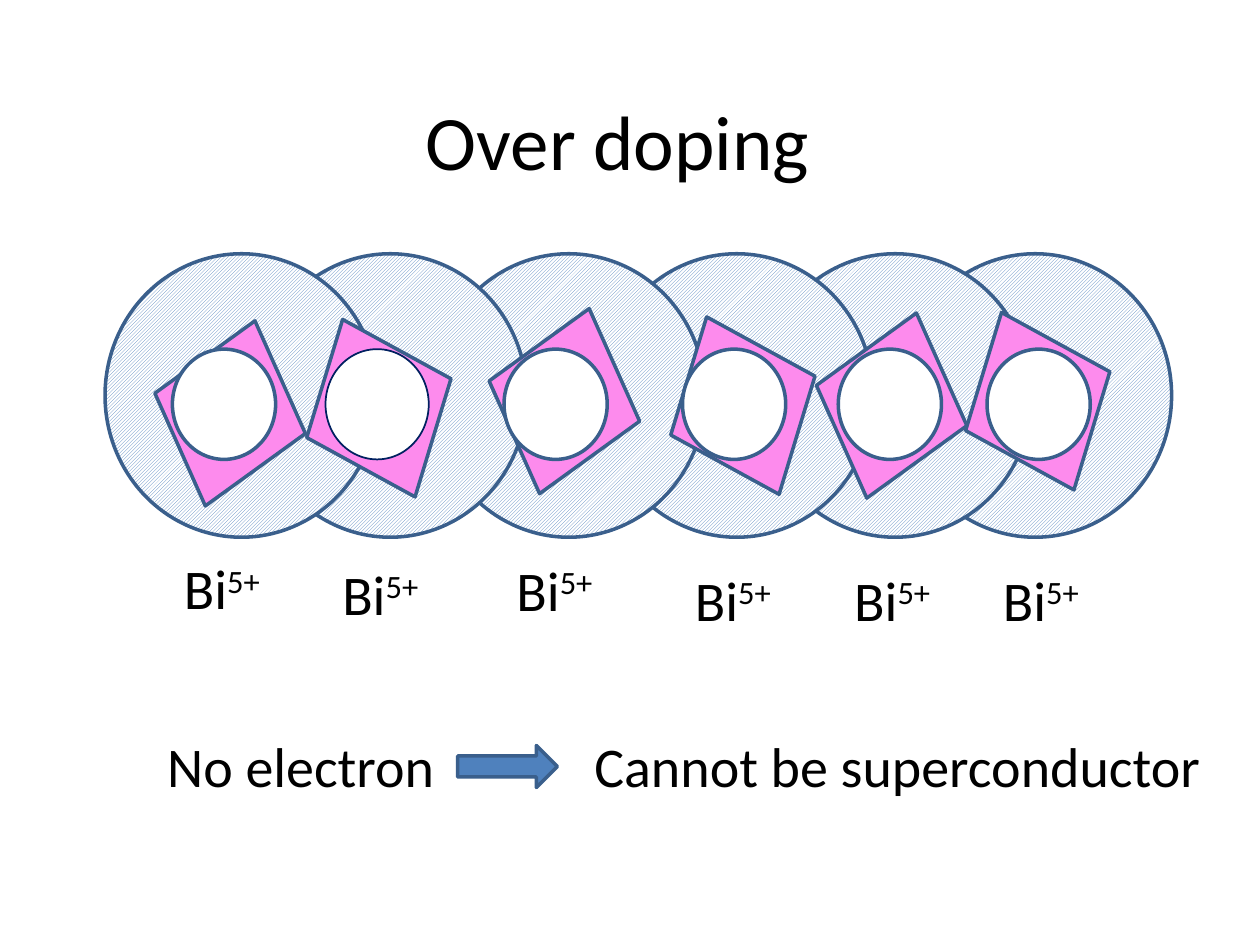
from collections import namedtuple

from pptx import Presentation
from pptx.dml.color import RGBColor
from pptx.enum.dml import MSO_PATTERN
from pptx.enum.shapes import MSO_SHAPE as Preset
from pptx.enum.text import MSO_ANCHOR as Anchor
from pptx.enum.text import MSO_AUTO_SIZE as AutoSize
from pptx.enum.text import PP_ALIGN as Align
from pptx.util import Pt

COLORS = {
    "text": "000000",
    "white": "FFFFFF",
    "blue": "4F81BD",
    "outline": "3A5F8C",
    "navy": "002060",
    "pink": "FD8BED",
}
FONT = "Calibri"

# Offsets in points from the corner of the chain
Atom = namedtuple("Atom", "cloud diamond diamond_top core label label_top edge")
ATOMS = [
    Atom(0, 27, 36.5, 38.5, 38, 168, "outline"),
    Atom(85, 112, 33.5, 126, 128.5, 171, "navy"),
    Atom(187, 218, 29.5, 228, 228, 169, "outline"),
    Atom(283, 320, 32, 330, 330, 174.5, "outline"),
    Atom(373.5, 405, 32, 419, 421, 174.5, "outline"),
    Atom(453.5, 488.5, 29.5, 504, 506, 174.5, "outline"),
]
TILTS = (15, -22.2)


def color(name):
    return RGBColor.from_string(COLORS[name])


def add_figure(page, preset, left, top, width, height, fill, edge="outline", weight=2):
    shape = page.shapes.add_shape(preset, Pt(left), Pt(top), Pt(width), Pt(height))
    shape.shadow.inherit = False
    shape.fill.solid()
    shape.fill.fore_color.rgb = color(fill)
    shape.line.color.rgb = color(edge)
    shape.line.width = Pt(weight)
    return shape


def add_text(page, left, top, width, height, text, size=32, raised=""):
    box = page.shapes.add_textbox(Pt(left), Pt(top), Pt(width), Pt(height))
    frame = box.text_frame
    frame.word_wrap = False
    frame.auto_size = AutoSize.SHAPE_TO_FIT_TEXT
    para = frame.paragraphs[0]
    para.font.name = FONT
    para.font.size = Pt(size)
    para.font.color.rgb = color("text")
    para.add_run().text = text
    if raised:
        span = para.add_run()
        span.text = raised
        span._r.get_or_add_rPr().set("baseline", "30000")
    return frame


def add_title(page, left, top, width, height):
    frame = add_text(page, left, top, width, height, "Over doping", size=44)
    frame.auto_size = AutoSize.NONE
    frame.word_wrap = True
    frame.vertical_anchor = Anchor.MIDDLE
    frame.paragraphs[0].alignment = Align.CENTER


def add_atom_chain(page, left, top):
    # Hatched electron clouds, the leftmost in front
    for atom in reversed(ATOMS):
        cloud = add_figure(page, Preset.OVAL, left + atom.cloud, top, 156, 162, "white")
        cloud.fill.patterned()
        cloud.fill.pattern = MSO_PATTERN.LIGHT_UPWARD_DIAGONAL
        cloud.fill.fore_color.rgb = color("blue")
        cloud.fill.back_color.rgb = color("white")

    # Diamonds leaning alternately right and left
    for index, atom in reversed(list(enumerate(ATOMS))):
        diamond = add_figure(page, Preset.DIAMOND, left + atom.diamond,
                             top + atom.diamond_top, 89, 109.5, "pink")
        diamond.rotation = TILTS[index % 2]

    # Cores and ion labels
    for atom in ATOMS:
        add_figure(page, Preset.OVAL, left + atom.core, top + 54.5, 59, 63,
                   "white", atom.edge, 1 if atom.edge == "navy" else 2)
        add_text(page, left + atom.label, top + atom.label_top, 68.5, 46, "Bi", raised="5+")


def add_conclusion(page, left, top):
    add_text(page, left, top, 168.5, 46, "No electron")
    add_figure(page, Preset.RIGHT_ARROW, left + 173, top + 11.5, 57, 24, "blue")
    add_text(page, left + 244, top, 364.5, 46, "Cannot be superconductor")


def main():
    deck = Presentation()
    deck.slide_width, deck.slide_height = Pt(720), Pt(540)
    page = deck.slides.add_slide(deck.slide_layouts[6])
    add_atom_chain(page, 60, 145)
    add_title(page, 29, 35, 648, 90)
    add_conclusion(page, 88.5, 414.5)
    deck.save("out.pptx")


if __name__ == "__main__":
    main()
